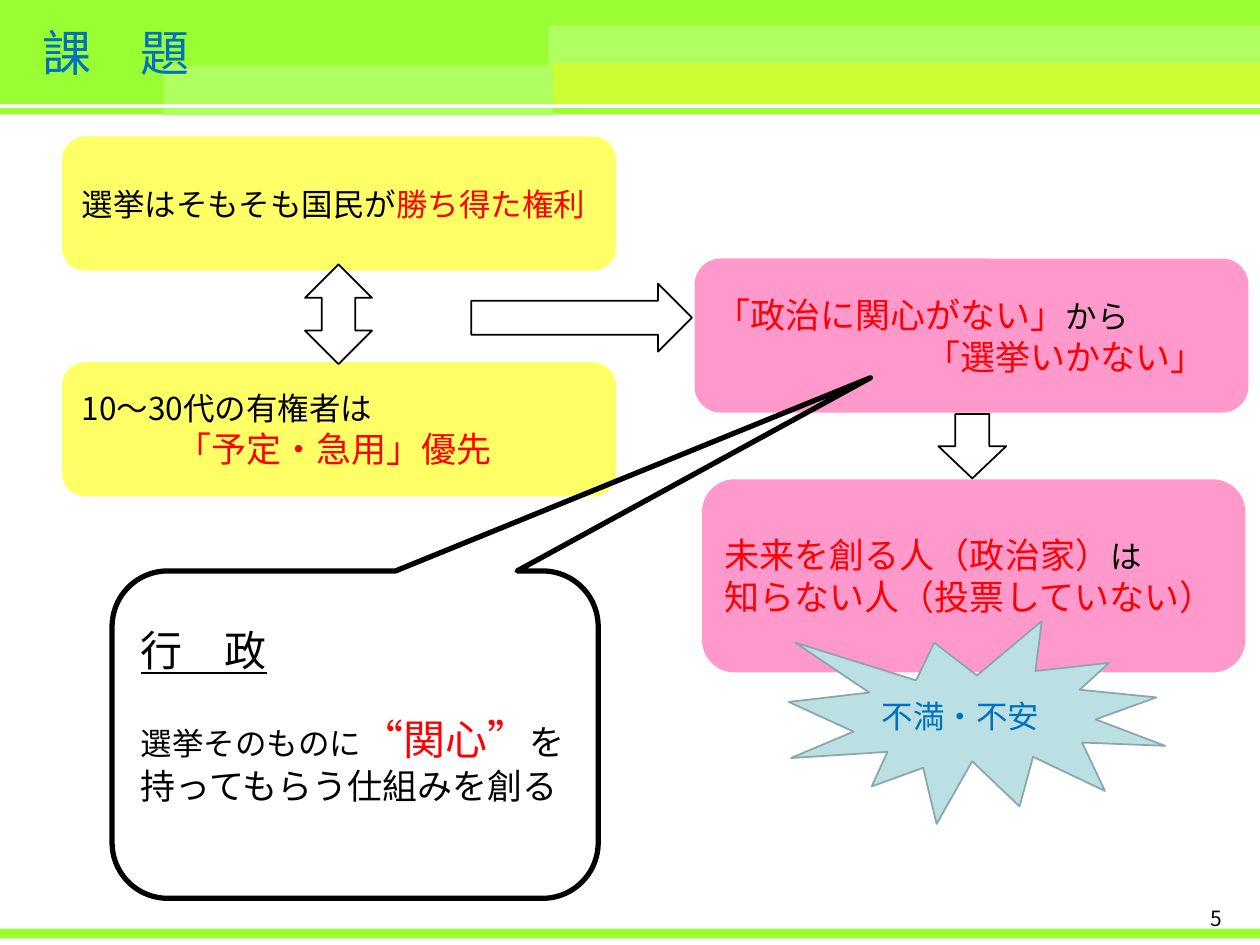
from pptx import Presentation
from pptx.dml.color import RGBColor as Rgb
from pptx.enum.shapes import MSO_CONNECTOR as Link, MSO_SHAPE as Kind
from pptx.enum.text import MSO_ANCHOR as Anchor, PP_ALIGN as Align
from pptx.oxml.ns import qn
from pptx.util import Cm, Pt
from lxml.etree import SubElement as Sub

FONT = "Noto Sans CJK JP"
HUES = {
    "green": "99FF33", "lime": "CCFF33", "pale": "B0FF61", "white": "FFFFFF",
    "black": "000000", "red": "FF0000", "blue": "0070C0", "yellow": "FFFF66",
    "pink": "FF99CC", "aqua": "BBE0E3", "slate": "8AA6A8",
}


def hue(name):
    return Rgb.from_string(HUES[name])


def add_box(slide, kind, at, fill=None, line=None, width=1, turn=0):
    """Add a preset shape; at is left, top, width, height in cm."""
    box = slide.shapes.add_shape(kind, *map(Cm, at))
    box.shadow.inherit = False
    box.rotation = turn
    if fill:
        box.fill.solid()
        box.fill.fore_color.rgb = hue(fill)
    else:
        box.fill.background()
    if line:
        box.line.color.rgb = hue(line)
        box.line.width = Pt(width)
    else:
        box.line.fill.background()
    return box


def add_rule(slide, start, end, color, width):
    rule = slide.shapes.add_connector(Link.STRAIGHT, *map(Cm, start + end))
    rule.line.color.rgb = hue(color)
    rule.line.width = Pt(width)
    Sub(rule._element.spPr, qn("a:effectLst"))


def add_run(para, text, size=18, color="black", under=False):
    run = para.add_run()
    run.text = text
    font = run.font
    font.name, font.size, font.underline = FONT, Pt(size), under
    font.color.rgb = hue(color)
    Sub(font._element, qn("a:ea"), typeface=FONT)


def add_para(frame, *runs, align=Align.LEFT, indent=0, before=0):
    """Add a paragraph; each run is a text and a dict of its format."""
    first = frame.paragraphs[0]
    para = frame.add_paragraph() if first.runs else first
    para.alignment = align
    para.space_before = Pt(before)
    if indent:
        props = para._p.get_or_add_pPr()
        props.set("marL", str(Pt(indent)))
        props.set("indent", "0")
    for text, form in runs:
        add_run(para, text, **form)


def set_frame(shape, anchor=Anchor.MIDDLE):
    frame = shape.text_frame
    frame.word_wrap = True
    frame.vertical_anchor = anchor
    return frame


def add_label(slide, at, text, anchor, align=Align.LEFT, **form):
    frame = set_frame(slide.shapes.add_textbox(*map(Cm, at)), anchor)
    add_para(frame, (text, form), align=align)


def add_card(slide, at, color):
    return set_frame(add_box(slide, Kind.ROUNDED_RECTANGLE, at, color, color))


def draw_frame(slide):
    bands = [
        ((0, 0, 25.4, 2.31), "green"),
        ((11.05, 1.27, 14.35, 0.86), "lime"),
        ((3.3, 1.32, 7.85, 1.01), "pale"),
        ((0, 18.72, 25.4, 0.2), "green"),
        ((11.05, 0.51, 14.35, 0.76), "pale"),
    ]
    for at, color in bands:
        add_box(slide, Kind.RECTANGLE, at, color)
    add_rule(slide, (0, 2.13), (25.4, 2.13), "white", 2.25)
    add_label(slide, (0.61, 0.08, 22.89, 1.93), "課　題", Anchor.MIDDLE,
              size=28, color="blue")
    add_label(slide, (18.97, 18.14, 5.92, 0.56), "5", Anchor.TOP,
              Align.RIGHT, size=12)


def draw_cards(slide):
    red = {"color": "red"}
    big = {"size": 20, "color": "red"}

    # Voters: right and reality
    right = add_card(slide, (1.27, 2.77, 11.13, 2.67), "yellow")
    add_para(right, ("選挙はそもそも国民が", {}), ("勝ち得た権利", red))
    young = add_card(slide, (1.27, 7.32, 11.13, 2.67), "yellow")
    add_para(young, ("10～30代の有権者は", {}))
    add_para(young, ("「予定・急用」優先", big), indent=54)

    # Outcome: no interest, unknown politicians
    apathy = add_card(slide, (14.02, 5.23, 11.13, 3.07), "pink")
    add_para(apathy, ("「政治に関心がない」", big), ("から", {}))
    add_para(apathy, ("「選挙いかない」", big), indent=120)
    future = add_card(slide, (14.17, 9.68, 10.92, 3.86), "pink")
    add_para(future, ("未来を創る人（政治家）", big), ("は", {}))
    add_para(future, ("知らない人（投票していない）", big))


def draw_arrows(slide):
    add_box(slide, Kind.UP_DOWN_ARROW, (6.15, 5.33, 1.35, 2.01),
            "white", "black")
    add_box(slide, Kind.RIGHT_ARROW, (9.5, 5.72, 4.45, 1.37), line="black")
    add_box(slide, Kind.RIGHT_ARROW, (18.95, 8.31, 1.3, 1.37), line="black",
            turn=90)


def draw_callout(slide):
    box = add_box(slide, Kind.ROUNDED_RECTANGULAR_CALLOUT,
                  (2.26, 11.51, 9.8, 6.6), line="black", width=3)
    for i, value in enumerate((1.06, -1.09, 0.17)):
        box.adjustments[i] = value
    frame = set_frame(box)
    frame.margin_bottom = Cm(0.9)
    add_para(frame, ("行　政", {"size": 24, "under": True}))
    add_para(frame, ("選挙そのものに", {}),
             ("“関心”", {"size": 24, "color": "red"}),
             ("を", {"size": 20}), before=22)
    add_para(frame, ("持ってもらう仕組みを創る", {"size": 20}))


def draw_burst(slide):
    burst = add_box(slide, Kind.EXPLOSION1, (15.9, 12.52, 7.59, 4.09),
                    "aqua", "slate")
    add_para(set_frame(burst), ("不満・不安", {"color": "blue"}))


def main():
    deck = Presentation()
    deck.slide_width, deck.slide_height = Cm(25.4), Cm(19.05)
    slide = deck.slides.add_slide(deck.slide_layouts[6])
    draw_frame(slide)
    draw_cards(slide)
    draw_arrows(slide)
    draw_callout(slide)
    draw_burst(slide)
    deck.save("out.pptx")


if __name__ == "__main__":
    main()
